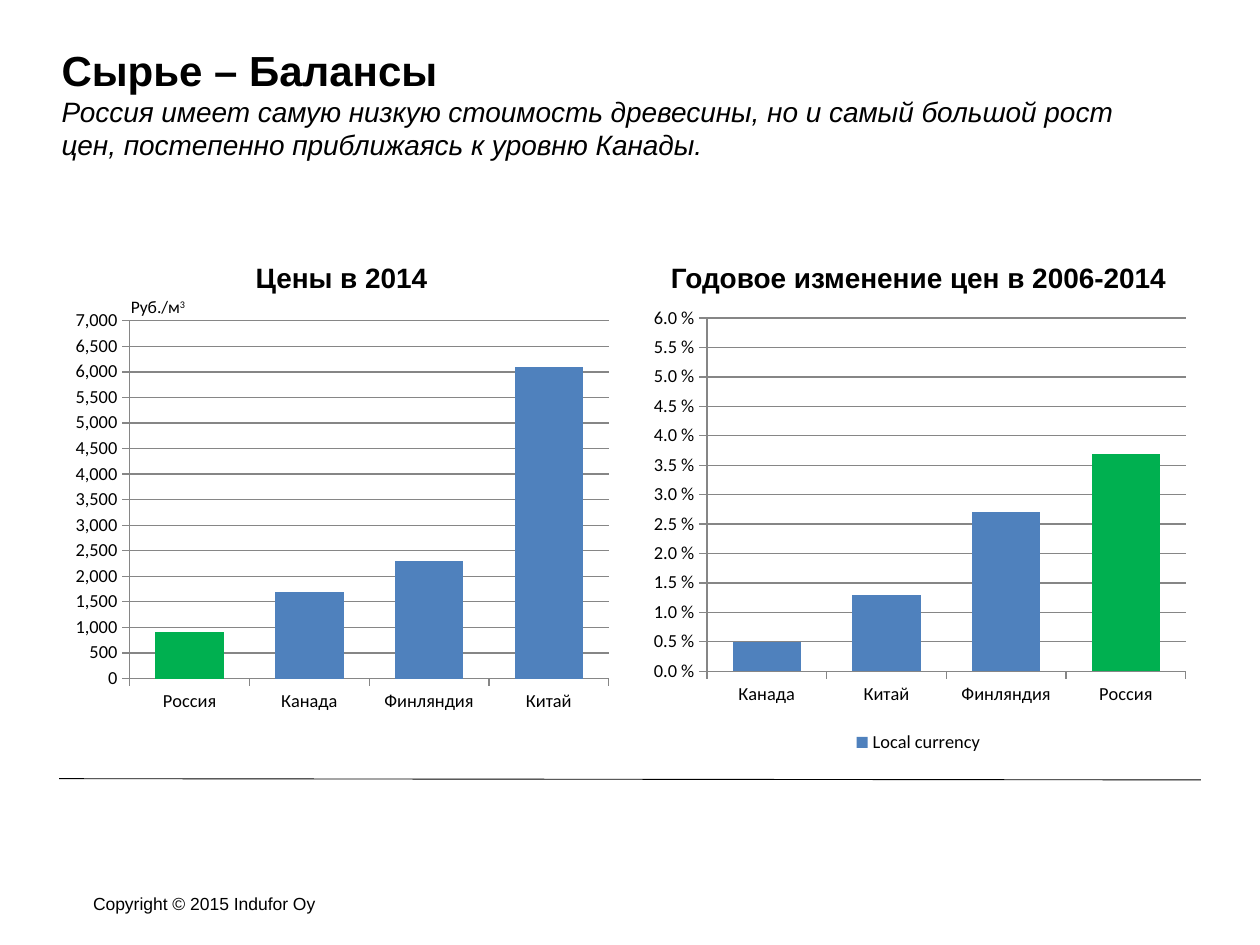
from dataclasses import dataclass

from lxml import etree
from pptx import Presentation
from pptx.chart.data import CategoryChartData
from pptx.dml.color import RGBColor
from pptx.enum.chart import XL_CHART_TYPE, XL_LEGEND_POSITION, XL_TICK_LABEL_POSITION, XL_TICK_MARK
from pptx.enum.shapes import MSO_CONNECTOR
from pptx.enum.text import MSO_ANCHOR, PP_ALIGN
from pptx.oxml.ns import qn
from pptx.util import Inches, Pt

COLUMNS = XL_CHART_TYPE.COLUMN_CLUSTERED
LEGEND_BOTTOM = XL_LEGEND_POSITION.BOTTOM
LABELS_LOW = XL_TICK_LABEL_POSITION.LOW
TICK_OUT, TICK_NONE = XL_TICK_MARK.OUTSIDE, XL_TICK_MARK.NONE
STRAIGHT = MSO_CONNECTOR.STRAIGHT
TOP, MIDDLE, BOTTOM = MSO_ANCHOR.TOP, MSO_ANCHOR.MIDDLE, MSO_ANCHOR.BOTTOM
LEFT, CENTER = PP_ALIGN.LEFT, PP_ALIGN.CENTER

BLACK = RGBColor(0x00, 0x00, 0x00)
BLUE = RGBColor(0x4F, 0x81, 0xBD)
GREEN = RGBColor(0x00, 0xB0, 0x50)
GRAY = RGBColor(0x86, 0x86, 0x86)

PANEL_WIDTH = 4.42
HEADING_TOP, HEADING_HEIGHT = 1.68, 0.7
CHART_TOP = HEADING_TOP + HEADING_HEIGHT
CHART_TEXT_SIZE = 10.5
RUSSIA = "Россия"


@dataclass
class TextRun:
    text: str
    size: float
    font: str = "Arial"
    bold: bool = False
    italic: bool = False
    superscript: bool = False
    new_line: bool = False


@dataclass
class PricePanel:
    heading: str
    left: float
    chart_height: float
    series: str
    values: dict[str, float]
    number_format: str
    maximum: float
    step: float
    plot_area: dict[str, float]
    legend: bool = False


PANELS = [
    PricePanel("Цены в 2014", 0.5, 3.34, "Series 1",
               {RUSSIA: 900, "Канада": 1700, "Финляндия": 2300, "Китай": 6100},
               "#,##0", 7000, 500, {"x": 0.12, "y": 0.05, "w": 0.86, "h": 0.85}),
    PricePanel("Годовое изменение цен в 2006-2014", 5.08, 3.64, "Local currency",
               {"Канада": 0.005, "Китай": 0.013, "Финляндия": 0.027, RUSSIA: 0.037},
               "0.0\\ %", 0.06, 0.005, {"x": 0.12, "y": 0.04, "w": 0.86, "h": 0.77},
               legend=True),
]


def add_text(slide, left: float, top: float, width: float, height: float,
             runs: list[TextRun], anchor=TOP, align=LEFT, wrap: bool = True) -> None:
    frame = slide.shapes.add_textbox(
        Inches(left), Inches(top), Inches(width), Inches(height)).text_frame
    frame.word_wrap = wrap
    frame.vertical_anchor = anchor
    paragraph = frame.paragraphs[0]
    paragraph.alignment = align
    for item in runs:
        if item.new_line:
            paragraph.add_line_break()
        run = paragraph.add_run()
        run.text = item.text
        run.font.name = item.font
        run.font.size = Pt(item.size)
        run.font.bold = item.bold
        run.font.italic = item.italic
        run.font.color.rgb = BLACK
        if item.superscript:
            run.font._element.set("baseline", "30000")


def style_font(font) -> None:
    font.name = "Calibri"
    font.size = Pt(CHART_TEXT_SIZE)
    font.color.rgb = BLACK


def style_axis(axis) -> None:
    axis.major_tick_mark = TICK_OUT
    axis.minor_tick_mark = TICK_NONE
    axis.format.line.color.rgb = GRAY
    style_font(axis.tick_labels.font)


def place_plot_area(chart, fractions: dict[str, float]) -> None:
    """Fix the inner plot area, given as fractions of the chart frame."""
    plot_area = chart._chartSpace.find(".//" + qn("c:plotArea"))
    for automatic in plot_area.findall(qn("c:layout")):
        plot_area.remove(automatic)
    layout = etree.Element(qn("c:layout"))
    manual = etree.SubElement(layout, qn("c:manualLayout"))
    settings = {"layoutTarget": "inner", "xMode": "edge", "yMode": "edge", **fractions}
    for tag, value in settings.items():
        etree.SubElement(manual, qn(f"c:{tag}")).set("val", str(value))
    plot_area.insert(0, layout)


def add_price_chart(slide, panel: PricePanel) -> None:
    data = CategoryChartData(number_format=panel.number_format)
    data.categories = list(panel.values)
    data.add_series(panel.series, list(panel.values.values()))
    chart = slide.shapes.add_chart(
        COLUMNS, Inches(panel.left), Inches(CHART_TOP),
        Inches(PANEL_WIDTH), Inches(panel.chart_height), data).chart
    style_font(chart.font)
    chart.has_title = False
    chart.has_legend = panel.legend
    if panel.legend:
        chart.legend.position = LEGEND_BOTTOM
        chart.legend.include_in_layout = False
        style_font(chart.legend.font)

    style_axis(chart.category_axis)
    chart.category_axis.tick_label_position = LABELS_LOW
    prices = chart.value_axis
    style_axis(prices)
    prices.minimum_scale = 0
    prices.maximum_scale = panel.maximum
    prices.major_unit = panel.step
    prices.major_gridlines.format.line.color.rgb = GRAY
    prices.tick_labels.number_format = panel.number_format
    prices.tick_labels.number_format_is_linked = False

    plot = chart.plots[0]
    plot.gap_width = 75
    plot.vary_by_categories = False
    columns = plot.series[0]
    columns.format.fill.solid()
    columns.format.fill.fore_color.rgb = BLUE
    russia_fill = columns.points[list(panel.values).index(RUSSIA)].format.fill
    russia_fill.solid()
    russia_fill.fore_color.rgb = GREEN
    place_plot_area(chart, panel.plot_area)


def add_footer_rule(slide) -> None:
    rule = slide.shapes.add_connector(
        STRAIGHT, Inches(0.47), Inches(6.18), Inches(9.53), Inches(6.19))
    rule.line.color.rgb = BLACK
    rule.line.width = Pt(0.5)
    etree.SubElement(rule._element.spPr, qn("a:effectLst"))


def main() -> None:
    deck = Presentation()
    deck.slide_width, deck.slide_height = Inches(10), Inches(7.5)
    slide = deck.slides.add_slide(deck.slide_layouts[6])

    add_footer_rule(slide)
    add_text(slide, 0.39, 0.3, 9, 1.25, [
        TextRun("Сырье – Балансы", 24, bold=True),
        TextRun("Россия имеет самую низкую стоимость древесины, но и самый большой рост "
                "цен, постепенно приближаясь к уровню Канады.", 16, italic=True, new_line=True),
    ])
    for panel in PANELS:
        add_text(slide, panel.left, HEADING_TOP, PANEL_WIDTH, HEADING_HEIGHT,
                 [TextRun(panel.heading, 16, bold=True)], BOTTOM, CENTER)
        add_price_chart(slide, panel)
    add_text(slide, 0.94, 2.3, 0.65, 0.27, [
        TextRun("Руб./м", 10, "Calibri"),
        TextRun("3", 10, "Calibri", superscript=True),
    ], wrap=False)
    add_text(slide, 0.64, 6.99, 3.17, 0.36,
             [TextRun("Copyright © 2015 Indufor Oy", 10)], MIDDLE)

    deck.save("out.pptx")


if __name__ == "__main__":
    main()
